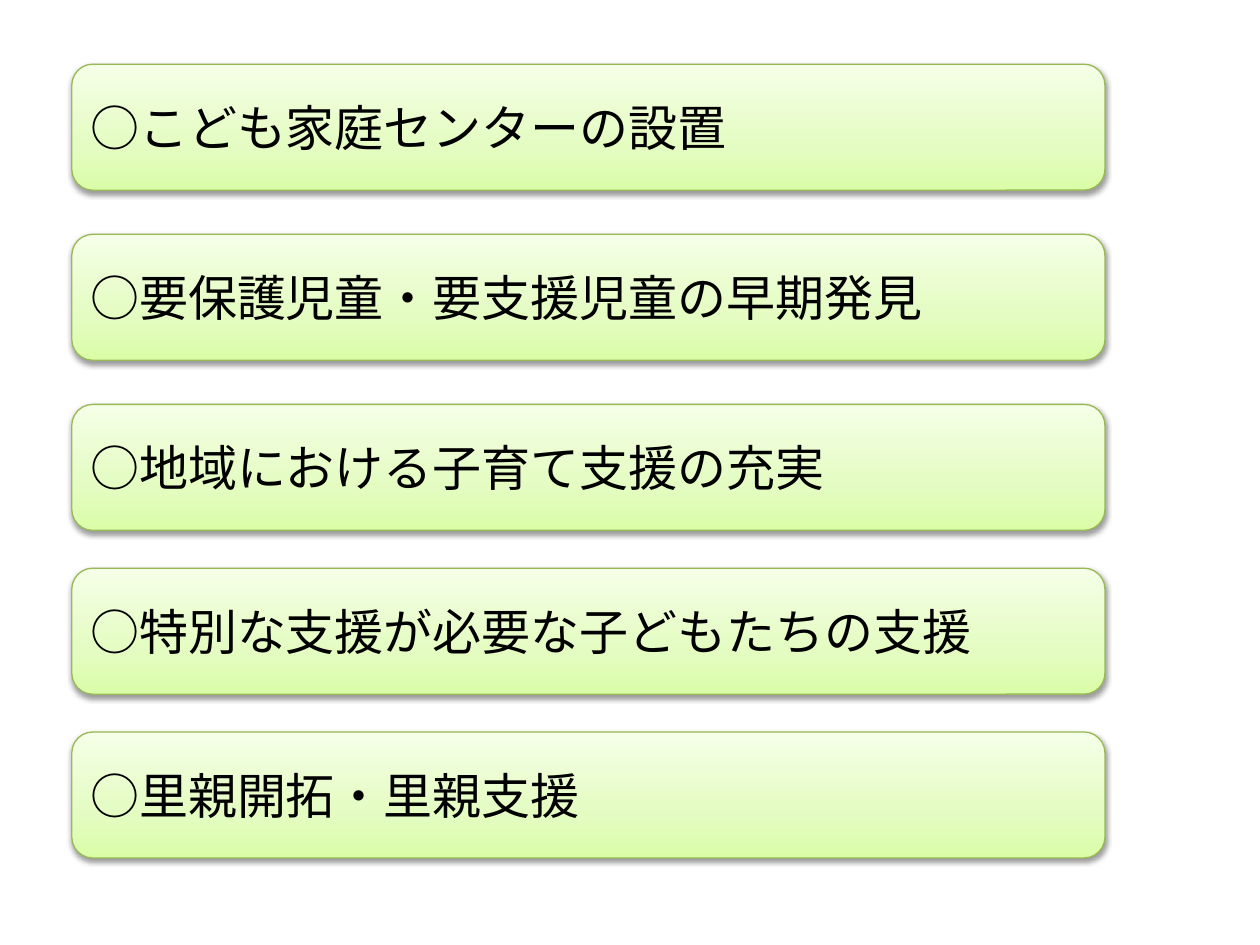
import pptx
import pptx.util
import pptx.dml.color
import pptx.enum.lang
import pptx.enum.shapes
import pptx.enum.text
import pptx.oxml
import pptx.oxml.ns

SLIDE_WIDTH, SLIDE_HEIGHT = 10, 7.5
BAR_LEFT, BAR_WIDTH, BAR_HEIGHT = 0.57, 8.2, 1
FIRST_TOP = 0.51
GAPS = [0.35, 0.35, 0.3, 0.3, 0]  # space below each bar
FONT = "Noto Sans CJK JP"
COLORS = {"deep": "DAFDA7", "middle": "E4FCC2", "pale": "F5FFE7",
          "border": "98B955", "text": "000000", "shadow": "000000"}
GRADIENT = [(0, "deep"), (35, "middle"), (100, "pale")]
MEASURES = [
    "○こども家庭センターの設置",
    "○要保護児童・要支援児童の早期発見",
    "○地域における子育て支援の充実",
    "○特別な支援が必要な子どもたちの支援",
    "○里親開拓・里親支援",
]


def color(name):
    return pptx.dml.color.RGBColor.from_string(COLORS[name])


def xml(tag, attributes, content=""):
    namespace = pptx.oxml.ns.nsdecls("a")
    return pptx.oxml.parse_xml(f"<a:{tag} {namespace} {attributes}>{content}</a:{tag}>")


def shade(bar):
    """Fill from the bottom edge upwards."""
    stops = "".join(
        f'<a:gs pos="{share * 1000}"><a:srgbClr val="{COLORS[name]}"/></a:gs>'
        for share, name in GRADIENT)
    gradient = xml("gradFill", 'rotWithShape="1"',
                   f'<a:gsLst>{stops}</a:gsLst><a:lin ang="16200000" scaled="0"/>')
    bar._element.spPr.find(pptx.oxml.ns.qn("a:prstGeom")).addnext(gradient)


def drop_shadow(bar):
    bar.shadow.inherit = False
    effects = bar._element.spPr.find(pptx.oxml.ns.qn("a:effectLst"))
    effects.append(xml(
        "outerShdw", 'blurRad="40000" dist="20000" dir="5400000" rotWithShape="0"',
        f'<a:srgbClr val="{COLORS["shadow"]}"><a:alpha val="38000"/></a:srgbClr>'))


def write(bar, wording):
    frame = bar.text_frame
    frame.word_wrap = True
    frame.vertical_anchor = pptx.enum.text.MSO_ANCHOR.MIDDLE
    paragraph = frame.paragraphs[0]
    paragraph.alignment = pptx.enum.text.PP_ALIGN.LEFT
    run = paragraph.add_run()
    run.text = wording
    run.font.size = pptx.util.Pt(28)
    run.font.color.rgb = color("text")
    run.font.name = FONT
    run.font.language_id = pptx.enum.lang.MSO_LANGUAGE_ID.JAPANESE
    # East Asian typeface
    run.font._element.append(xml("ea", f'typeface="{FONT}"'))


def add_bar(slide, top, wording):
    bar = slide.shapes.add_shape(
        pptx.enum.shapes.MSO_SHAPE.ROUNDED_RECTANGLE,
        *map(pptx.util.Inches, (BAR_LEFT, top, BAR_WIDTH, BAR_HEIGHT)))
    bar.line.color.rgb = color("border")
    bar.line.width = pptx.util.Pt(0.75)
    shade(bar)
    drop_shadow(bar)
    write(bar, wording)


def main():
    deck = pptx.Presentation()
    deck.slide_width = pptx.util.Inches(SLIDE_WIDTH)
    deck.slide_height = pptx.util.Inches(SLIDE_HEIGHT)
    slide = deck.slides.add_slide(deck.slide_layouts[6])

    # Stack of measures
    top = FIRST_TOP
    for wording, gap in zip(MEASURES, GAPS):
        add_bar(slide, top, wording)
        top += BAR_HEIGHT + gap

    deck.save("out.pptx")


if __name__ == "__main__":
    main()
